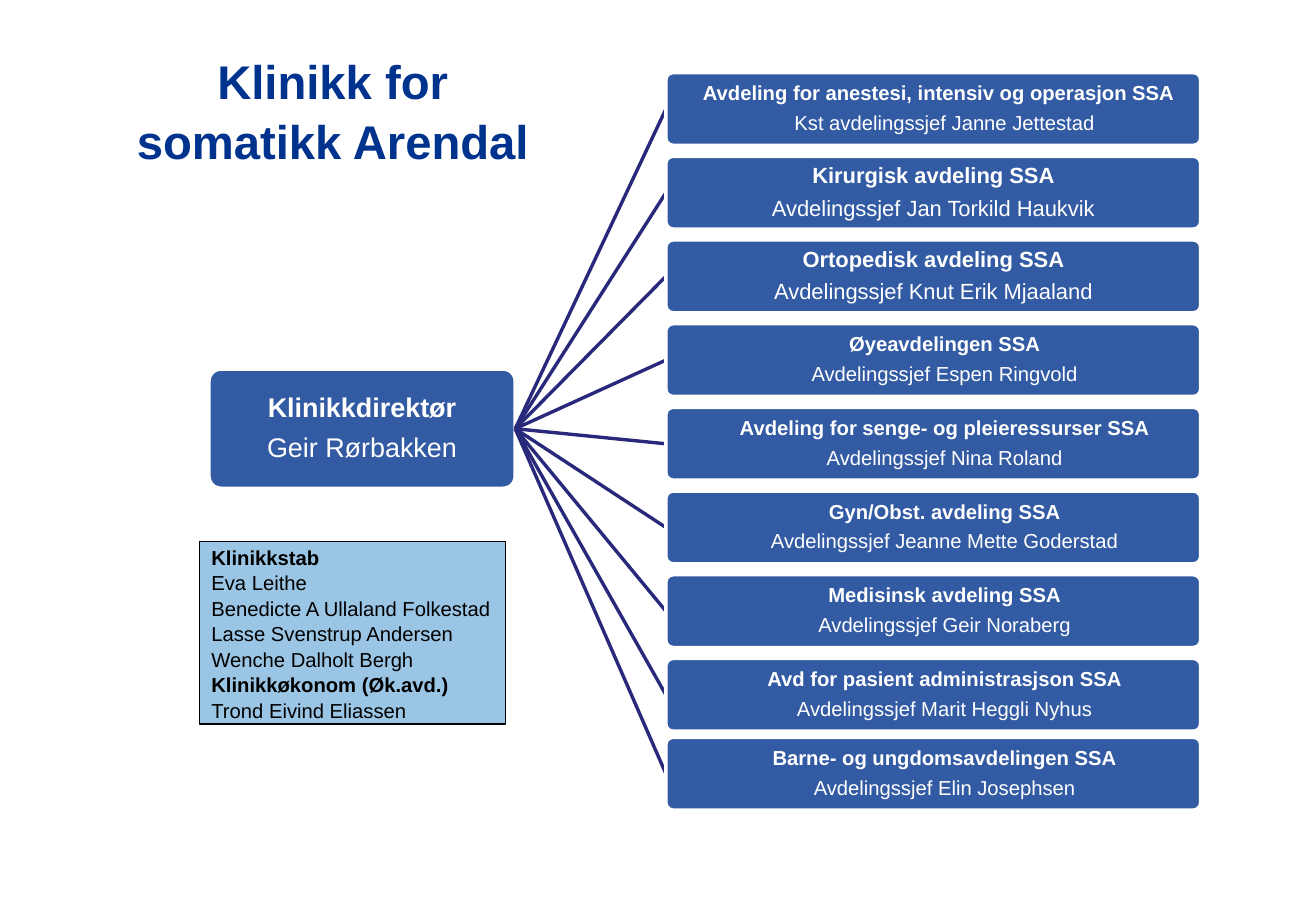
from lxml.etree import SubElement
from pptx import Presentation
from pptx.dml.color import RGBColor
from pptx.enum.shapes import MSO_CONNECTOR, MSO_SHAPE
from pptx.enum.text import MSO_ANCHOR, PP_ALIGN
from pptx.oxml.ns import qn
from pptx.util import Cm, Pt

NAVY = RGBColor(0x00, 0x33, 0x8D)
LINE_BLUE = RGBColor(0x29, 0x29, 0x7B)
LIGHT_BLUE = RGBColor(0x7A, 0xB2, 0xDC)
WHITE = RGBColor(0xFF, 0xFF, 0xFF)
BLACK = RGBColor(0x00, 0x00, 0x00)

BOX_LEFT, BOX_TOP, BOX_PITCH = 13.92, 1.52, 1.75
BOX_WIDTH, BOX_HEIGHT = 11.18, 1.52
LAST_BOX_TOP = 15.42
INDENT = 0.48

# unit, leader, text size, indent of each of the two lines
DEPARTMENTS = [
    ("Avdeling for anestesi, intensiv og operasjon SSA",
     "Kst avdelingssjef Janne Jettestad", 12, (0.23, INDENT)),
    ("Kirurgisk avdeling SSA", "Avdelingssjef Jan Torkild Haukvik", 13, (0, 0)),
    ("Ortopedisk avdeling SSA", "Avdelingssjef Knut Erik Mjaaland", 13, (0, 0)),
    ("Øyeavdelingen SSA", "Avdelingssjef Espen Ringvold", 12, (INDENT, INDENT)),
    ("Avdeling for senge- og pleieressurser SSA",
     "Avdelingssjef Nina Roland", 12, (INDENT, INDENT)),
    ("Gyn/Obst. avdeling SSA", "Avdelingssjef Jeanne Mette Goderstad", 12, (INDENT, INDENT)),
    ("Medisinsk avdeling SSA", "Avdelingssjef Geir Noraberg", 12, (INDENT, INDENT)),
    ("Avd for pasient administrasjson SSA",
     "Avdelingssjef Marit Heggli Nyhus", 12, (INDENT, INDENT)),
    ("Barne- og ungdomsavdelingen SSA", "Avdelingssjef Elin Josephsen", 12, (INDENT, INDENT)),
]
STAFF = [
    ("Klinikkstab", True),
    ("Eva Leithe", False),
    ("Benedicte A Ullaland Folkestad", False),
    ("Lasse Svenstrup Andersen", False),
    ("Wenche Dalholt Bergh", False),
    ("Klinikkøkonom (Øk.avd.)", True),
    ("Trond Eivind Eliassen", False),
]


def add_box(kind, left, top, width, height, fill, opacity, line, line_width):
    """Add a shape whose fill has the given opacity in percent."""
    sp = s.shapes.add_shape(kind, Cm(left), Cm(top), Cm(width), Cm(height))
    sp.shadow.inherit = False
    sp.fill.solid()
    sp.fill.fore_color.rgb = fill
    color = sp.fill._xPr.find(qn("a:solidFill"))[0]
    SubElement(color, qn("a:alpha"), val=str(opacity * 1000))
    sp.line.color.rgb = line
    sp.line.width = Pt(line_width)
    return sp


def add_unit(left, top, width, height, lines, size, indents):
    """Add a rounded box with a bold unit name above its leader."""
    sp = add_box(MSO_SHAPE.ROUNDED_RECTANGLE, left, top, width, height, NAVY, 80, WHITE, 2)
    sp.adjustments[0] = 0.1
    tf = sp.text_frame
    tf.word_wrap = True
    tf.vertical_anchor = MSO_ANCHOR.MIDDLE
    for side in ("left", "right", "top", "bottom"):
        setattr(tf, f"margin_{side}", Cm(0.08))
    for i, (text, indent) in enumerate(zip(lines, indents)):
        p = tf.paragraphs[0] if i == 0 else tf.add_paragraph()
        p.alignment = PP_ALIGN.CENTER
        p.line_spacing = 0.9
        p.space_after = Pt(0.4 * size)
        p._p.get_or_add_pPr().set("marL", str(Cm(indent)))
        r = p.add_run()
        r.text = text
        for name, value in {"name": "Arial", "size": Pt(size), "bold": i == 0}.items():
            setattr(r.font, name, value)
        r.font.color.rgb = WHITE
    return sp


prs = Presentation()
prs.slide_width, prs.slide_height = Cm(27.51), Cm(19.05)
s = prs.slides.add_slide(prs.slide_layouts[6])

director = add_unit(4.37, 7.72, 6.4, 2.49, ("Klinikkdirektør", "Geir Rørbakken"), 16, (0, 0))

for i, (unit, leader, size, indents) in enumerate(DEPARTMENTS):
    top = LAST_BOX_TOP if i == len(DEPARTMENTS) - 1 else BOX_TOP + i * BOX_PITCH
    # The connector comes first so that it lies behind the edge of its box
    cn = s.shapes.add_connector(MSO_CONNECTOR.STRAIGHT, 0, 0, 0, 0)
    cn.line.color.rgb = LINE_BLUE
    cn.line.width = Pt(2)
    SubElement(cn._element.spPr, qn("a:effectLst"))
    box = add_unit(BOX_LEFT, top, BOX_WIDTH, BOX_HEIGHT, (unit, leader), size, indents)
    cn.begin_connect(director, 3)
    cn.end_connect(box, 1)

title = s.shapes.add_textbox(Cm(2.36), Cm(0.91), Cm(9.19), Cm(4.39))
title.text_frame.word_wrap = True
p = title.text_frame.paragraphs[0]
p.alignment = PP_ALIGN.CENTER
p.line_spacing = 1.05
r = p.add_run()
r.text = "Klinikk for somatikk Arendal"
for name, value in {"name": "Arial", "size": Pt(28), "bold": True}.items():
    setattr(r.font, name, value)
r.font.color.rgb = NAVY

staff = add_box(MSO_SHAPE.RECTANGLE, 4.17, 11.33, 6.4, 3.81, LIGHT_BLUE, 75, BLACK, 0.75)
tf = staff.text_frame
tf.word_wrap = False
for i, (text, bold) in enumerate(STAFF):
    p = tf.paragraphs[0] if i == 0 else tf.add_paragraph()
    p.alignment = PP_ALIGN.LEFT
    p.line_spacing = 1.05
    r = p.add_run()
    r.text = text
    for name, value in {"name": "Arial", "size": Pt(12), "bold": bold}.items():
        setattr(r.font, name, value)
    r.font.color.rgb = BLACK

prs.save("out.pptx")
